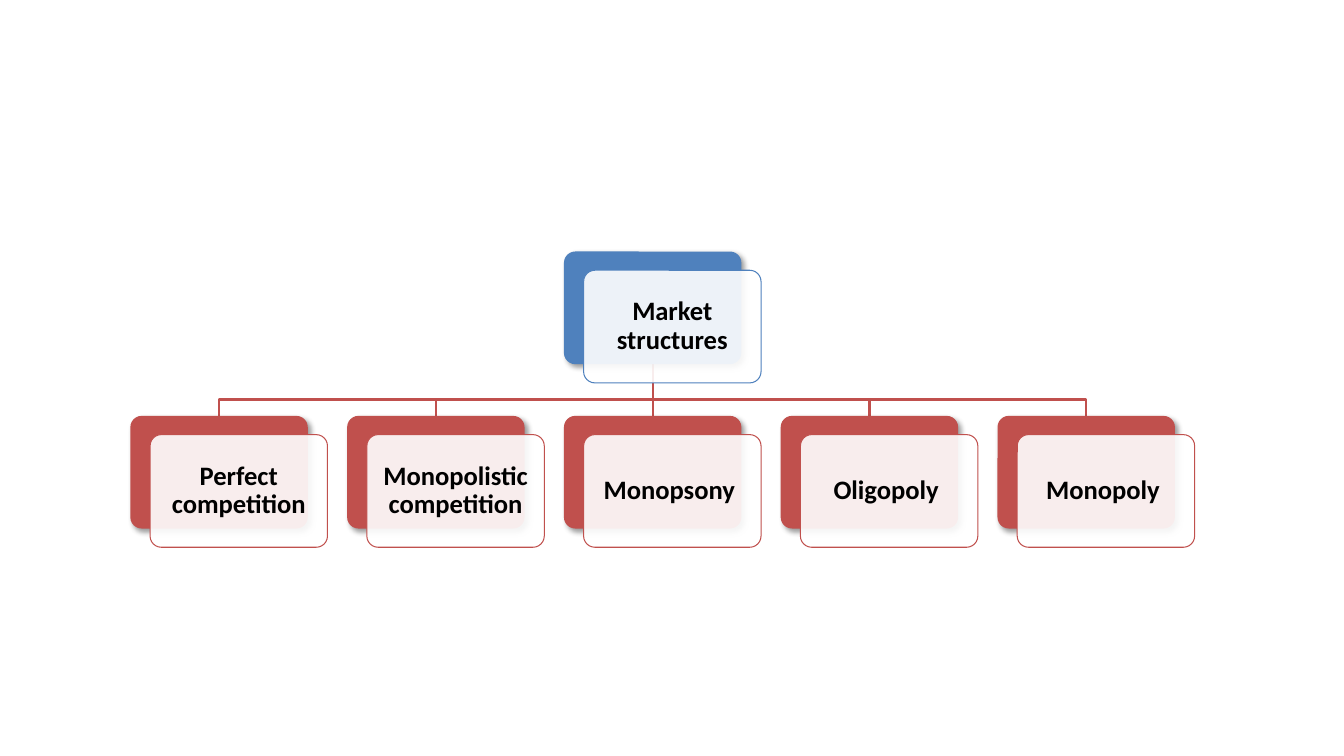
from dataclasses import dataclass

from lxml.etree import SubElement
from pptx import Presentation
from pptx.dml.color import RGBColor
from pptx.enum.shapes import MSO_CONNECTOR, MSO_SHAPE
from pptx.enum.text import MSO_ANCHOR, PP_ALIGN
from pptx.oxml.ns import qn
from pptx.shapes.autoshape import Shape
from pptx.shapes.connector import Connector
from pptx.shapes.shapetree import SlideShapes
from pptx.util import Pt


@dataclass(frozen=True)
class Theme:
    white: RGBColor = RGBColor(0xFF, 0xFF, 0xFF)
    text: RGBColor = RGBColor(0, 0, 0)
    root: RGBColor = RGBColor(0x4F, 0x81, 0xBD)
    child: RGBColor = RGBColor(0xC0, 0x50, 0x4D)
    font: str = "Calibri"
    size: float = 19
    thick: float = 1.5
    thin: float = 0.75


@dataclass(frozen=True)
class Card:
    label: str
    x: float
    y: float
    color: RGBColor

    @property
    def center(self) -> float:
        return self.x + CARD_W / 2


THEME = Theme()
CARD_W, CARD_H = 126.7, 80.45
SHIFT_X, SHIFT_Y = 14.08, 13.37  # front panel against back panel
PITCH = 154.85
FIRST_X, ROOT_Y, CHILD_Y = 93.15, 179.7, 297.1
ELBOW_Y = 285.35
INSET = 5.7

# The trailing spaces count in the centring of the one-line labels.
LABELS = ["Perfect competition", "Monopolistic competition", "Monopsony ", "Oligopoly ", "Monopoly "]
CHILDREN = [Card(label, FIRST_X + i * PITCH, CHILD_Y, THEME.child) for i, label in enumerate(LABELS)]
ROOT = Card("Market structures", FIRST_X + 2 * PITCH, ROOT_Y, THEME.root)


def add_box(shapes: SlideShapes, kind: MSO_SHAPE, x: float, y: float, w: float, h: float,
            fill: RGBColor) -> Shape:
    sp = shapes.add_shape(kind, Pt(x), Pt(y), Pt(w), Pt(h))
    sp.shadow.inherit = False
    sp.fill.solid()
    sp.fill.fore_color.rgb = fill
    return sp


def set_line(sp: Shape | Connector, color: RGBColor, width: float) -> None:
    sp.line.color.rgb = color
    sp.line.width = Pt(width)


def add_panel(shapes: SlideShapes, x: float, y: float, fill: RGBColor) -> Shape:
    sp = add_box(shapes, MSO_SHAPE.ROUNDED_RECTANGLE, x, y, CARD_W, CARD_H, fill)
    sp.adjustments[0] = 0.1
    return sp


def set_alpha(color_element, percent: int) -> None:
    SubElement(color_element, qn("a:alpha"), val=str(percent * 1000))


def add_shadow(sp: Shape) -> None:
    effects = sp._element.spPr.find(qn("a:effectLst"))
    shadow = SubElement(effects, qn("a:outerShdw"), blurRad=str(Pt(4)), dist=str(Pt(3)),
                        dir=str(45 * 60000), rotWithShape="0")
    set_alpha(SubElement(shadow, qn("a:srgbClr"), val="000000"), 40)


def add_label(sp: Shape, label: str) -> None:
    tf = sp.text_frame
    tf.word_wrap = True
    tf.vertical_anchor = MSO_ANCHOR.MIDDLE
    tf.margin_left = tf.margin_right = tf.margin_top = tf.margin_bottom = Pt(INSET)
    p = tf.paragraphs[0]
    p.text = label
    p.alignment = PP_ALIGN.CENTER
    p.line_spacing = 0.9
    p.space_after = Pt(0.35 * THEME.size)
    p.font.name = THEME.font
    p.font.size = Pt(THEME.size)
    p.font.bold = True
    p.font.color.rgb = THEME.text


def add_card(shapes: SlideShapes, card: Card) -> None:
    """Draw a shadowed back panel and a translucent labelled panel in front of it."""
    back = add_panel(shapes, card.x, card.y, card.color)
    back.line.fill.background()
    add_shadow(back)
    front = add_panel(shapes, card.x + SHIFT_X, card.y + SHIFT_Y, THEME.white)
    set_alpha(front._element.spPr.find(qn("a:solidFill"))[0], 90)
    set_line(front, card.color, THEME.thin)
    add_label(front, card.label)


def add_branch(shapes: SlideShapes, parent: Card, child: Card) -> None:
    """Join two cards: straight down if aligned, otherwise by an elbow."""
    start_y = parent.y + CARD_H
    if child.x == parent.x:
        sp = shapes.add_connector(MSO_CONNECTOR.STRAIGHT, Pt(parent.center), Pt(start_y),
                                  Pt(child.center), Pt(child.y))
        SubElement(sp._element.spPr, qn("a:effectLst"))
    else:
        builder = shapes.build_freeform(Pt(parent.center), Pt(start_y))
        corners = [(parent.center, ELBOW_Y), (child.center, ELBOW_Y), (child.center, child.y)]
        builder.add_line_segments([(Pt(x), Pt(y)) for x, y in corners], close=False)
        sp = builder.convert_to_shape()
        sp.shadow.inherit = False
        sp.fill.background()
    set_line(sp, child.color, THEME.thick)


def main() -> None:
    prs = Presentation()
    prs.slide_width, prs.slide_height = Pt(960), Pt(540)
    shapes = prs.slides.add_slide(prs.slide_layouts[6]).shapes

    backdrop = add_box(shapes, MSO_SHAPE.RECTANGLE, 84.25, 80.65, 790.55, 401, THEME.white)
    set_line(backdrop, THEME.white, THEME.thick)
    for child in reversed(CHILDREN):
        add_branch(shapes, ROOT, child)
    for card in [ROOT, *CHILDREN]:
        add_card(shapes, card)

    prs.save("out.pptx")


if __name__ == "__main__":
    main()
